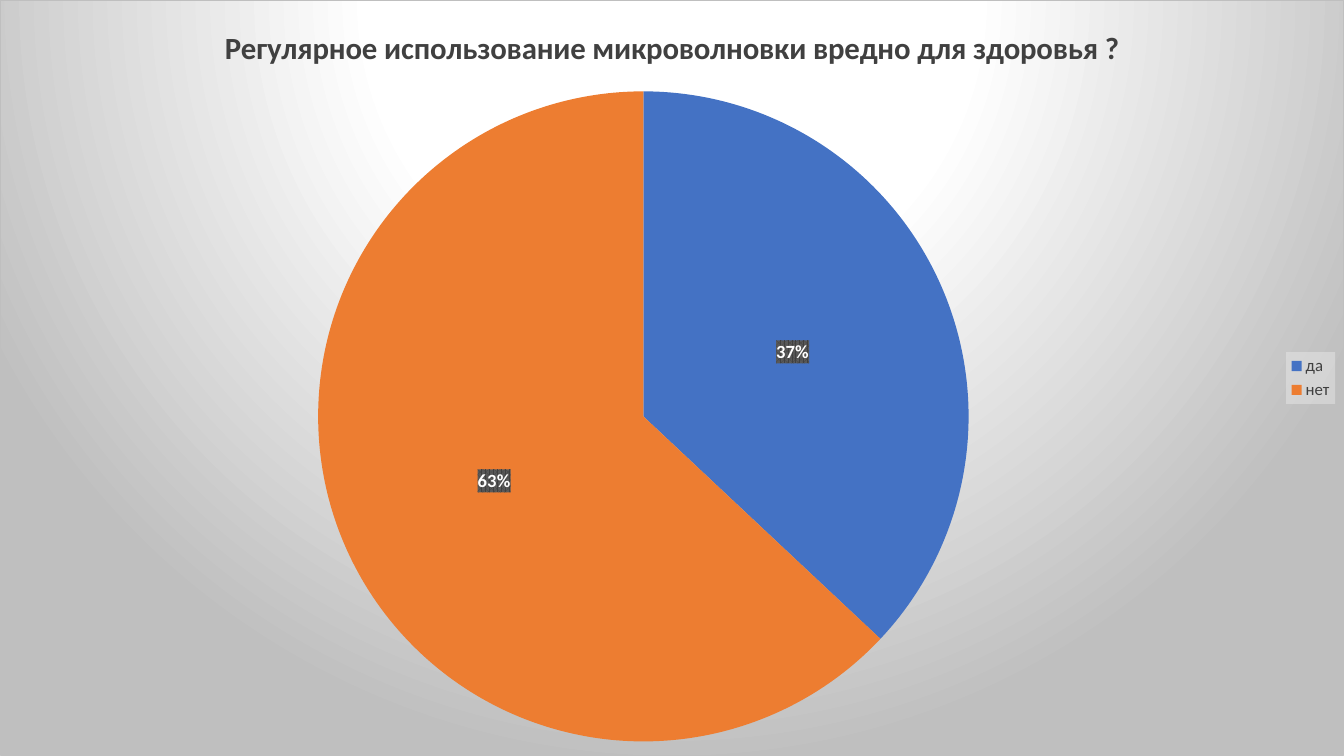
from pptx import Presentation
from pptx.chart.data import CategoryChartData
from pptx.dml.color import RGBColor
from pptx.enum.chart import XL_CHART_TYPE, XL_LABEL_POSITION, XL_LEGEND_POSITION
from pptx.oxml import parse_xml
from pptx.oxml.ns import nsdecls
from pptx.util import Pt

PIE = XL_CHART_TYPE.PIE
MIDDLE = XL_LABEL_POSITION.CENTER
RIGHT = XL_LEGEND_POSITION.RIGHT

# Content
TITLE = "Регулярное использование микроволновки вредно для здоровья ?"
VOTES = {"да": 37, "нет": 63}
FACE = "Calibri"
WIDE, HIGH = 960, 540
DISC = {"x": 227, "y": 65, "size": 465}
COLORS = {
    "да": "4472C4", "нет": "ED7D31", "text": "404040", "label": "FFFFFF",
    "glow": "FFFFFF", "edge": "BFBFBF", "legend": "F2F2F2",
    "dark": "404040", "dim": "595959",
}


def style(font, size, color, bold=False):
    font.name, font.size, font.bold = FACE, Pt(size), bold
    font.color.rgb = RGBColor.from_string(COLORS[color])


def tint(name, extra=""):
    return f'<a:srgbClr val="{COLORS[name]}">{extra}</a:srgbClr>'


def props(body):
    return parse_xml(f'<c:spPr {nsdecls("c", "a")}>{body}</c:spPr>')


deck = Presentation()
deck.slide_width, deck.slide_height = Pt(WIDE), Pt(HIGH)
slide = deck.slides.add_slide(deck.slide_layouts[6])

# Pie over the whole slide
data = CategoryChartData()
data.categories = list(VOTES)
data.add_series(TITLE, list(VOTES.values()))
chart = slide.shapes.add_chart(PIE, 0, 0, Pt(WIDE), Pt(HIGH), data).chart
style(chart.font, 10, "text")
plot = chart.plots[0]
plot.vary_by_categories = True
series = plot.series[0]
for i, name in enumerate(VOTES):
    fill = series.points[i].format.fill
    fill.solid()
    fill.fore_color.rgb = RGBColor.from_string(COLORS[name])

# Title
chart.has_title = True
frame = chart.chart_title.text_frame
frame.text = TITLE
style(frame.paragraphs[0].runs[0].font, 22, "text", True)
chart.chart_title.include_in_layout = False

# Percent labels on dark patches
labels = series.data_labels
labels.show_percentage, labels.show_value = True, False
labels.number_format, labels.number_format_is_linked = "0%", False
labels.position = MIDDLE
style(labels.font, 13.3, "label", True)
patch = (f'<a:pattFill prst="pct75"><a:fgClr>{tint("dark")}</a:fgClr>'
         f'<a:bgClr>{tint("dim")}</a:bgClr></a:pattFill>')
root = chart.element
root.xpath(".//c:ser/c:dLbls/c:numFmt")[0].addnext(props(patch))

# Legend on a pale, see-through panel
chart.has_legend = True
chart.legend.position = RIGHT
chart.legend.include_in_layout = False
style(chart.legend.font, 12, "text")
panel = tint("legend", '<a:alpha val="39000"/>')
root.xpath(".//c:legend/c:txPr")[0].addprevious(
    props(f"<a:solidFill>{panel}</a:solidFill>"))

# Place of the disc, as shares of the chart
shares = {"x": DISC["x"] / WIDE, "y": DISC["y"] / HIGH,
          "w": DISC["size"] / WIDE, "h": DISC["size"] / HIGH}
spots = "".join(f'<c:{k} val="{v:.4f}"/>' for k, v in shares.items())
area = root.xpath(".//c:plotArea")[0]
for old in area.xpath("c:layout"):
    area.remove(old)
area.insert(0, parse_xml(
    f'<c:layout {nsdecls("c")}><c:manualLayout><c:layoutTarget val="inner"/>'
    f'<c:xMode val="edge"/><c:yMode val="edge"/>{spots}'
    '</c:manualLayout></c:layout>'))

# Backdrop: radial glow from above, thin border
stops = "".join(f'<a:gs pos="{pos * 1000}">{tint(name)}</a:gs>'
                for pos, name in ((0, "glow"), (39, "glow"), (100, "edge")))
root.xpath("c:chart")[0].addnext(props(
    f'<a:gradFill><a:gsLst>{stops}</a:gsLst><a:path path="circle">'
    '<a:fillToRect l="50000" t="-80000" r="50000" b="180000"/></a:path>'
    f'</a:gradFill><a:ln w="{Pt(0.75)}"><a:solidFill>{tint("edge")}'
    '</a:solidFill></a:ln>'))

deck.save("out.pptx")
